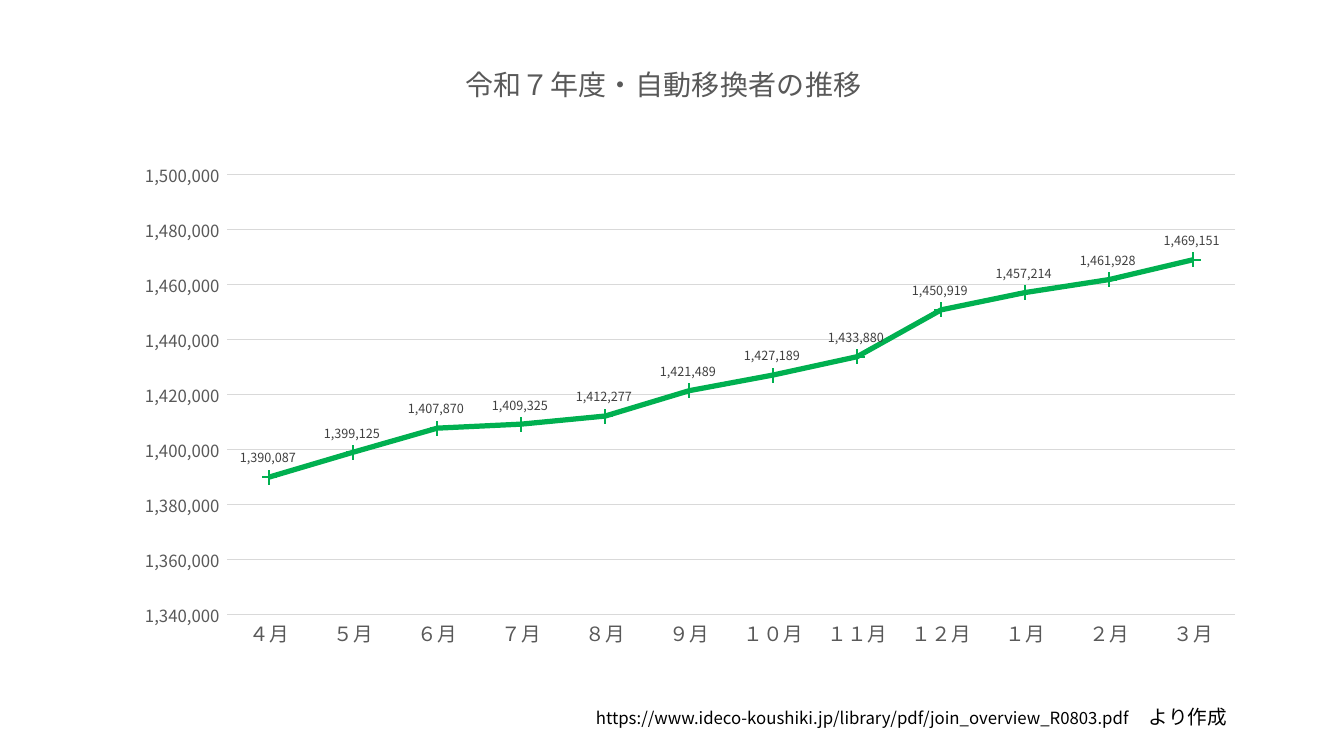
from lxml import etree
from pptx import Presentation
from pptx.chart.data import CategoryChartData
from pptx.dml.color import RGBColor
from pptx.enum.chart import XL_CHART_TYPE, XL_LABEL_POSITION, XL_MARKER_STYLE, XL_TICK_MARK
from pptx.oxml import parse_xml
from pptx.oxml.ns import nsdecls, qn
from pptx.util import Emu, Pt

LINE_MARKERS = XL_CHART_TYPE.LINE_MARKERS
ABOVE = XL_LABEL_POSITION.ABOVE
PLUS = XL_MARKER_STYLE.PLUS
NO_TICK = XL_TICK_MARK.NONE

# Content
TITLE = "令和７年度・自動移換者の推移"
SOURCE = ("https://www.ideco-koushiki.jp/library/pdf/join_overview_R0803.pdf", "　より作成")
TRANSFERS = {
    "４月": 1390087, "５月": 1399125, "６月": 1407870, "７月": 1409325,
    "８月": 1412277, "９月": 1421489, "１０月": 1427189, "１１月": 1433880,
    "１２月": 1450919, "１月": 1457214, "２月": 1461928, "３月": 1469151,
}

# Style
FONT = "Noto Sans CJK JP"
NUMBER_FORMAT = r"#,##0_);[Red]\(#,##0\)"
BLACK = RGBColor(0x00, 0x00, 0x00)
DARK_GREY = RGBColor(0x40, 0x40, 0x40)
GREY = RGBColor(0x59, 0x59, 0x59)
LIGHT_GREY = RGBColor(0xD9, 0xD9, 0xD9)
GREEN = RGBColor(0x00, 0xB0, 0x50)

# Geometry in px: left, top, width, height
PX = 9072
SLIDE_SIZE = (1344, 756)
CHART_BOX = (62, 27, 1207, 682)
SOURCE_BOX = (586, 700, 758, 82)
TITLE_PLACE = {"x": 0.33, "y": 0.04}
PLOT_PLACE = {"x": 0.137, "y": 0.217, "w": 0.835, "h": 0.645}


def px(lengths):
    return [Emu(length * PX) for length in lengths]


def style_font(font, size, color):
    font.name = FONT
    font.size = Pt(size)
    font.bold = False
    font.color.rgb = color


def set_east_asian(root):
    for latin in list(root.iter(qn("a:latin"))):
        east_asian = etree.Element(qn("a:ea"), typeface=FONT)
        latin.addnext(east_asian)


def manual_layout(place, inner=False):
    layout = parse_xml(f"<c:layout {nsdecls('c')}><c:manualLayout/></c:layout>")
    settings = {"layoutTarget": "inner"} if inner else {}
    settings.update(xMode="edge", yMode="edge", **place)
    for tag, value in settings.items():
        etree.SubElement(layout[0], qn(f"c:{tag}"), val=str(value))
    return layout


presentation = Presentation()
presentation.slide_width, presentation.slide_height = px(SLIDE_SIZE)
slide = presentation.slides.add_slide(presentation.slide_layouts[6])

# Source line
source_box = slide.shapes.add_textbox(*px(SOURCE_BOX))
source_box.text_frame.word_wrap = True
source_line = source_box.text_frame.paragraphs[0]
for words, size in zip(SOURCE, (12, 14)):
    run = source_line.add_run()
    run.text = words
    style_font(run.font, size, BLACK)
set_east_asian(source_line._p)

# Line chart
chart_data = CategoryChartData(number_format=NUMBER_FORMAT)
chart_data.categories = list(TRANSFERS)
chart_data.add_series("自動移換者", list(TRANSFERS.values()))
chart = slide.shapes.add_chart(LINE_MARKERS, *px(CHART_BOX), chart_data).chart
style_font(chart.font, 10, BLACK)
chart.has_legend = False

# Chart title
chart.has_title = True
chart_title = chart.chart_title
chart_title.text_frame.text = TITLE
style_font(chart_title.text_frame.paragraphs[0].runs[0].font, 20, GREY)
chart_title.include_in_layout = False
title_xml = chart_title._element
for old in title_xml.findall(qn("c:layout")):
    title_xml.remove(old)
title_xml.find(qn("c:tx")).addnext(manual_layout(TITLE_PLACE))

# Plot area
plot_area = chart._chartSpace.chart.plotArea
for old in plot_area.findall(qn("c:layout")):
    plot_area.remove(old)
plot_area.insert(0, manual_layout(PLOT_PLACE, inner=True))

# Axes
months, people = chart.category_axis, chart.value_axis
for axis, size in ((months, 14), (people, 12)):
    axis.major_tick_mark = axis.minor_tick_mark = NO_TICK
    style_font(axis.tick_labels.font, size, GREY)
people.minimum_scale, people.maximum_scale, people.major_unit = 1340000, 1500000, 20000
people.tick_labels.number_format = NUMBER_FORMAT
people.tick_labels.number_format_is_linked = False
people.format.line.fill.background()
people.has_major_gridlines = True
for line in (months.format.line, people.major_gridlines.format.line):
    line.color.rgb = LIGHT_GREY
    line.width = Pt(0.75)

# Series, markers and value labels
plot = chart.plots[0]
plot.vary_by_categories = False
transfers = plot.series[0]
transfers.smooth = False
transfers.format.line.color.rgb = GREEN
transfers.format.line.width = Pt(3.75)
marker = transfers.marker
marker.style = PLUS
marker.size = 10
marker.format.fill.solid()
marker.format.fill.fore_color.rgb = GREEN
marker.format.line.color.rgb = GREEN
labels = transfers.data_labels
labels.show_value = True
labels.position = ABOVE
labels.number_format = NUMBER_FORMAT
labels.number_format_is_linked = False
style_font(labels.font, 9, DARK_GREY)
set_east_asian(chart._chartSpace)

presentation.save("out.pptx")
